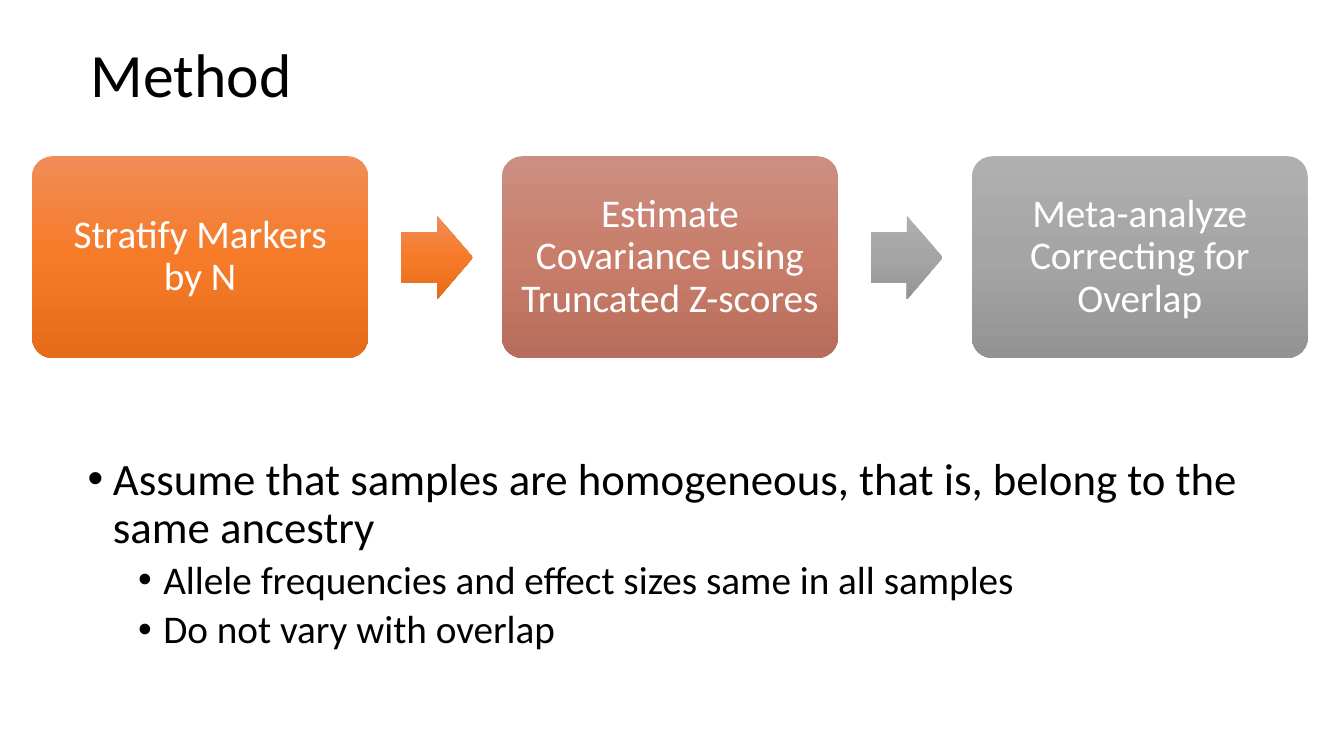
from dataclasses import dataclass

from copy import deepcopy
from lxml.etree import SubElement
from pptx import Presentation
from pptx.dml.color import RGBColor
from pptx.enum.shapes import MSO_SHAPE
from pptx.enum.text import MSO_ANCHOR, MSO_AUTO_SIZE, PP_ALIGN
from pptx.oxml.ns import qn
from pptx.util import Emu, Pt

EMU_PER_PX = 9144
FONT = "Calibri"
COLORS = {"ink": "000000", "paper": "FFFFFF"}
GRADIENTS = {
    "orange": ("F18C57", "F67B28", "E56C19"),
    "clay": ("CB8F81", "C97E6B", "B76D5B"),
    "gray": ("AFAFAF", "A5A5A5", "939393"),
}
STEP_PITCH = 466


@dataclass(frozen=True)
class Box:
    left: int
    top: int
    width: int
    height: int


@dataclass(frozen=True)
class Step:
    label: str
    gradient: str
    arrow_gradient: str | None = None


@dataclass(frozen=True)
class Bullet:
    text: str
    level: int
    size: int
    indent: int
    space_before: int


STEPS = (
    Step("Stratify Markers by N", "orange", "orange"),
    Step("Estimate Covariance using Truncated Z-scores", "clay", "gray"),
    Step("Meta-analyze Correcting for Overlap", "gray"),
)
ASSUMPTIONS = (
    Bullet("Assume that samples are homogeneous, that is, belong to the same ancestry", 0, 32, 25, 10),
    Bullet("Allele frequencies and effect sizes same in all samples", 1, 28, 75, 5),
    Bullet("Do not vary with overlap", 1, 28, 75, 5),
)


def px(length: int) -> Emu:
    return Emu(length * EMU_PER_PX)


def place(shape, box: Box) -> None:
    shape.left, shape.top = px(box.left), px(box.top)
    shape.width, shape.height = px(box.width), px(box.height)


def style(paragraph, size: int, color: str, align: PP_ALIGN) -> None:
    paragraph.font.name = FONT
    paragraph.font.size = Pt(size)
    paragraph.font.color.rgb = RGBColor.from_string(COLORS[color])
    paragraph.line_spacing = 0.9
    paragraph.alignment = align


def fill_gradient(shape, gradient: str) -> None:
    shape.fill.gradient()
    shape.fill.gradient_angle = 270
    stop_list = shape._element.spPr.find(".//" + qn("a:gsLst"))
    stop_list.insert(1, deepcopy(stop_list[0]))
    for index, (stop, color) in enumerate(zip(shape.fill.gradient_stops, GRADIENTS[gradient])):
        stop.position = index / 2
        stop.color.rgb = RGBColor.from_string(color)


def add_block(slide, kind: MSO_SHAPE, box: Box, adjustments: tuple[float, ...], gradient: str):
    block = slide.shapes.add_shape(kind, 0, 0, 0, 0)
    place(block, box)
    for index, value in enumerate(adjustments):
        block.adjustments[index] = value
    block.shadow.inherit = False
    block.line.fill.background()
    fill_gradient(block, gradient)
    return block


def add_step(slide, step: Step, index: int) -> None:
    left = 32 + index * STEP_PITCH
    card = add_block(slide, MSO_SHAPE.ROUNDED_RECTANGLE, Box(left, 155, 333, 200), (0.1,), step.gradient)
    frame = card.text_frame
    frame.word_wrap = True
    frame.vertical_anchor = MSO_ANCHOR.MIDDLE
    frame.margin_left = frame.margin_right = px(12)
    frame.margin_top = frame.margin_bottom = px(12)
    frame.text = step.label
    style(frame.paragraphs[0], 28, "paper", PP_ALIGN.CENTER)
    if step.arrow_gradient:
        arrow_box = Box(left + 366, 214, 71, 83)
        add_block(slide, MSO_SHAPE.RIGHT_ARROW, arrow_box, (0.6, 0.5), step.arrow_gradient)


def add_title(slide, text: str) -> None:
    title = slide.shapes.title
    place(title, Box(80, -7, 1150, 167))
    frame = title.text_frame
    frame.text = text
    frame.auto_size = MSO_AUTO_SIZE.NONE
    frame.vertical_anchor = MSO_ANCHOR.MIDDLE
    style(frame.paragraphs[0], 44, "ink", PP_ALIGN.LEFT)


def add_bullets(slide, bullets: tuple[Bullet, ...]) -> None:
    body = slide.placeholders[1]
    place(body, Box(77, 448, 1196, 283))
    frame = body.text_frame
    frame.text = "\n".join(bullet.text for bullet in bullets)
    frame.auto_size = MSO_AUTO_SIZE.NONE
    for paragraph, bullet in zip(frame.paragraphs, bullets):
        paragraph.level = bullet.level
        style(paragraph, bullet.size, "ink", PP_ALIGN.LEFT)
        paragraph.space_before = Pt(bullet.space_before)
        properties = paragraph._p.get_or_add_pPr()
        properties.set("marL", str(px(bullet.indent)))
        properties.set("indent", str(px(-25)))
        SubElement(properties, qn("a:buFont"), typeface="Arial")
        SubElement(properties, qn("a:buChar"), char="•")
        default_run = properties.find(qn("a:defRPr"))
        properties.append(default_run)


def main() -> None:
    presentation = Presentation()
    presentation.slide_width, presentation.slide_height = px(1333), px(750)
    slide = presentation.slides.add_slide(presentation.slide_layouts[1])
    add_title(slide, "Method")
    add_bullets(slide, ASSUMPTIONS)
    for index, step in enumerate(STEPS):
        add_step(slide, step, index)
    presentation.save("out.pptx")


if __name__ == "__main__":
    main()
